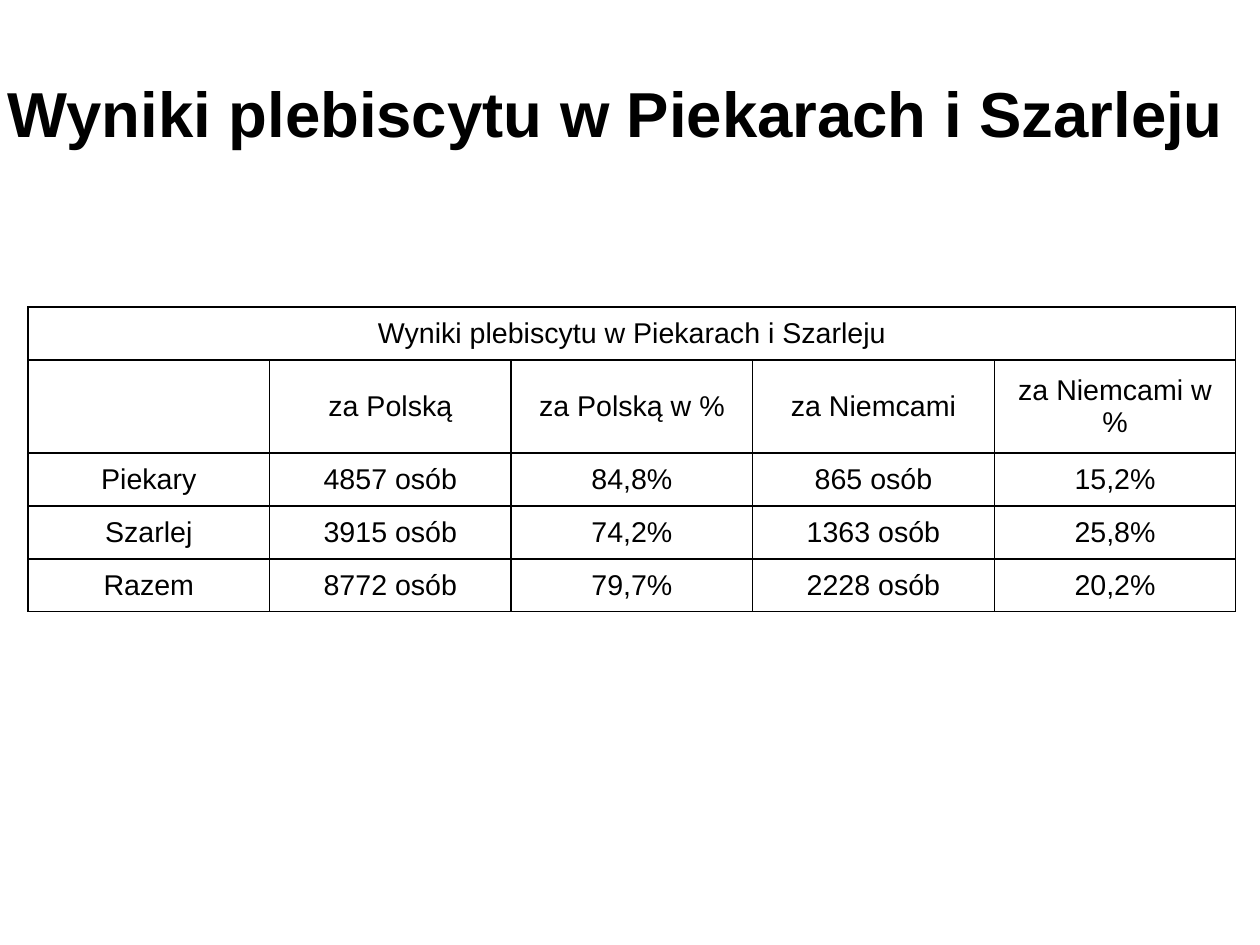
import dataclasses

import lxml.etree
import pptx
import pptx.dml.color
import pptx.enum.text
import pptx.oxml.ns
import pptx.util

EMU_PER_PX = 8000
CENTER = pptx.enum.text.PP_ALIGN.CENTER
MIDDLE = pptx.enum.text.MSO_ANCHOR.MIDDLE


@dataclasses.dataclass(frozen=True)
class Theme:
    """Colours, font and type sizes of the slide."""
    ink: str = "000000"
    paper: str = "FFFFFF"
    font: str = "Arial"
    title_size: int = 40
    cell_size: int = 18
    border: int = 1


THEME = Theme()
TITLE = "Wyniki plebiscytu w Piekarach i Szarleju"
RESULTS = [
    ["", "za Polską", "za Polską w %", "za Niemcami", "za Niemcami w %"],
    ["Piekary", "4857 osób", "84,8%", "865 osób", "15,2%"],
    ["Szarlej", "3915 osób", "74,2%", "1363 osób", "25,8%"],
    ["Razem", "8772 osób", "79,7%", "2228 osób", "20,2%"],
]
ROW_HEIGHTS = [53, 93, 53, 53, 53]


def px(length):
    """Turn pixels into EMU."""
    return pptx.util.Emu(length * EMU_PER_PX)


def color(value):
    """Turn a hex string into a colour."""
    return pptx.dml.color.RGBColor.from_string(value)


def write(frame, text, size, bold=False):
    """Write one centred run into a text frame."""
    para = frame.paragraphs[0]
    para.alignment = CENTER
    span = para.add_run()
    span.text = text
    span.font.name = THEME.font
    span.font.size = pptx.util.Pt(size)
    span.font.bold = bold
    span.font.color.rgb = color(THEME.ink)
    return para


def outline(cell):
    """Give a cell a plain fill and a border on all four sides."""
    cell.fill.solid()
    cell.fill.fore_color.rgb = color(THEME.paper)
    properties = cell._tc.get_or_add_tcPr()
    qn = pptx.oxml.ns.qn
    for index, side in enumerate(("a:lnL", "a:lnR", "a:lnT", "a:lnB")):
        line = lxml.etree.Element(qn(side), w=str(pptx.util.Pt(THEME.border)))
        fill = lxml.etree.SubElement(line, qn("a:solidFill"))
        lxml.etree.SubElement(fill, qn("a:srgbClr"), val=THEME.ink)
        properties.insert(index, line)


def add_title(page, left, top, width, height):
    """Place the heading in its box."""
    box = page.shapes.add_textbox(px(left), px(top), px(width), px(height))
    frame = box.text_frame
    frame.word_wrap = True
    frame.vertical_anchor = MIDDLE
    frame.margin_left = frame.margin_right = 0
    frame.margin_top = frame.margin_bottom = 0
    write(frame, TITLE, THEME.title_size, bold=True).line_spacing = 0.9


def add_results(page, left, top, width):
    """Place the results table with equal columns across the given width."""
    count = len(RESULTS[0])
    rows = [[TITLE] + [""] * (count - 1)] + RESULTS
    table = page.shapes.add_table(len(rows), count, px(left), px(top),
                                  px(width), px(sum(ROW_HEIGHTS))).table
    table.first_row = table.horz_banding = False
    for column in table.columns:
        column.width = px(width) // count
    for row, height in zip(table.rows, ROW_HEIGHTS):
        row.height = px(height)
    table.cell(0, 0).merge(table.cell(0, count - 1))
    for row, texts in zip(table.rows, rows):
        for cell, text in zip(row.cells, texts):
            outline(cell)
            cell.vertical_anchor = MIDDLE
            if text:
                write(cell.text_frame, text, THEME.cell_size)


def main():
    """Build the deck and save it."""
    deck = pptx.Presentation()
    deck.slide_width, deck.slide_height = px(1260), px(945)
    page = deck.slides.add_slide(deck.slide_layouts[6])
    add_title(page, 0, 38, 1231, 158)
    add_results(page, 28, 307, 1208)
    deck.save("out.pptx")


if __name__ == "__main__":
    main()
